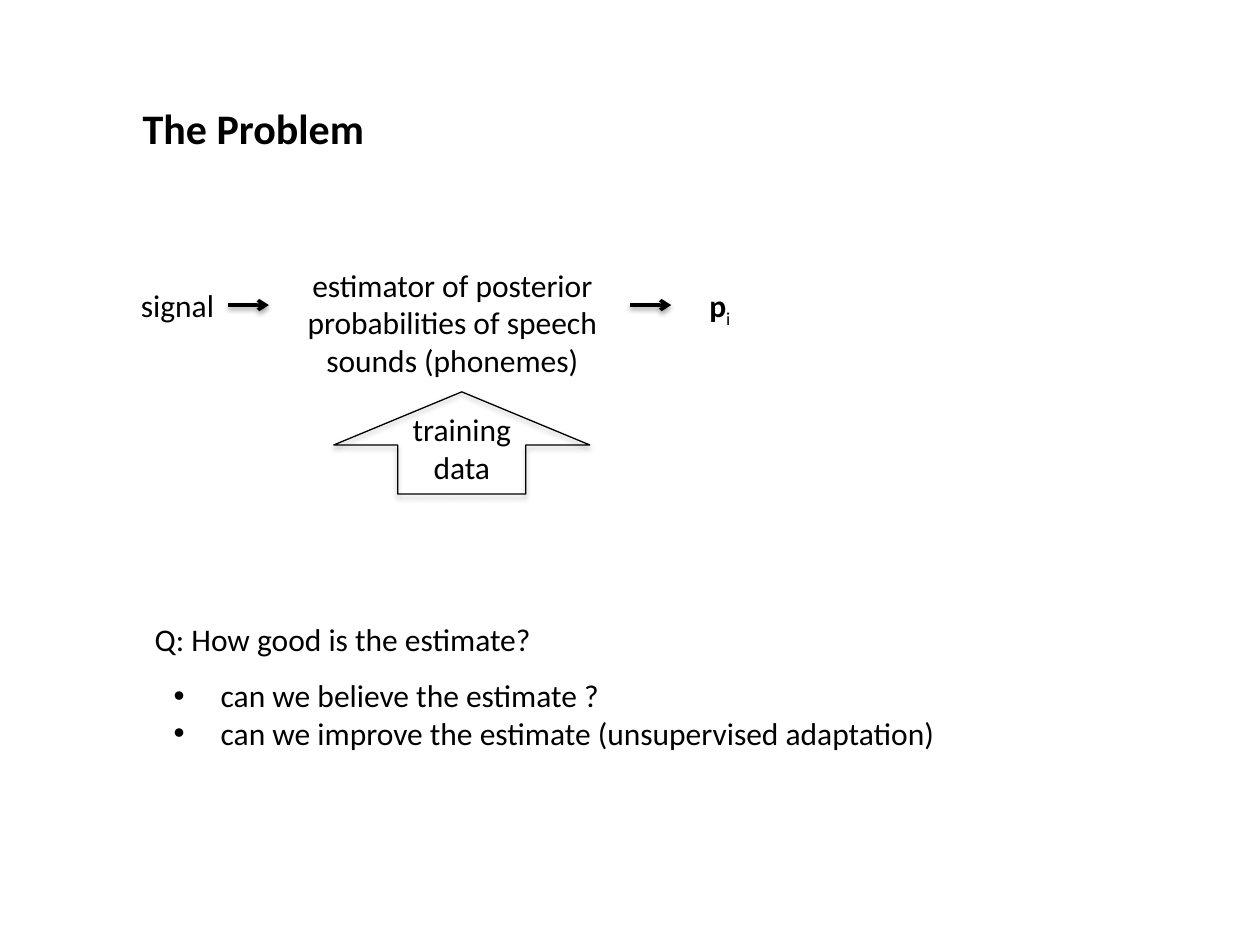
from dataclasses import dataclass

from lxml.etree import SubElement
from pptx import Presentation
from pptx.dml.color import RGBColor
from pptx.enum.shapes import MSO_CONNECTOR as Connector, MSO_SHAPE as Shape
from pptx.enum.text import MSO_ANCHOR as Anchor, MSO_AUTO_SIZE as AutoSize, PP_ALIGN as Align
from pptx.oxml.ns import qn
from pptx.util import Cm, Pt


@dataclass(frozen=True)
class Theme:
    """Colours, font and sizes of the slide."""
    ink: RGBColor = RGBColor(0, 0, 0)
    font: str = "Calibri"
    title: Pt = Pt(24)
    body: Pt = Pt(18)
    flow_line: Pt = Pt(2)
    outline: Pt = Pt(0.75)


THEME = Theme()


def style_font(font, size=THEME.body, bold=False):
    """Apply the theme font."""
    font.name, font.size, font.bold = THEME.font, size, bold
    font.color.rgb = THEME.ink


def add_text(slide, left, top, width, height, lines, align=Align.LEFT, wrap=True):
    """Add a text box with one paragraph per line."""
    box = slide.shapes.add_textbox(Cm(left), Cm(top), Cm(width), Cm(height))
    frame = box.text_frame
    frame.text = "\n".join(lines)
    frame.word_wrap = wrap
    frame.auto_size = AutoSize.SHAPE_TO_FIT_TEXT
    for paragraph in frame.paragraphs:
        paragraph.alignment = align
        style_font(paragraph.font)
    return box


def add_shadow(shape, distance, opacity):
    """Give a shape a soft shadow that falls downwards."""
    properties = shape.element.spPr
    effects = properties.find(qn("a:effectLst"))
    if effects is None:
        effects = SubElement(properties, qn("a:effectLst"))
    shadow = SubElement(effects, qn("a:outerShdw"), blurRad=str(Pt(3.1)),
                        dist=str(Pt(distance)), dir="5400000", rotWithShape="0")
    color = SubElement(shadow, qn("a:srgbClr"), val=str(THEME.ink))
    SubElement(color, qn("a:alpha"), val=str(opacity * 1000))


def add_arrow(slide, left, top, length):
    """Add a horizontal arrow pointing right."""
    arrow = slide.shapes.add_connector(
        Connector.STRAIGHT, Cm(left), Cm(top), Cm(left + length), Cm(top))
    arrow.line.color.rgb = THEME.ink
    arrow.line.width = THEME.flow_line
    SubElement(arrow.element.spPr.find(qn("a:ln")), qn("a:tailEnd"), type="arrow")
    add_shadow(arrow, 1.6, 38)
    return arrow


def add_bullet(paragraph):
    """Turn a paragraph into a bullet with a hanging indent."""
    properties = paragraph._p.get_or_add_pPr()
    properties.set("marL", str(Cm(0.95)))
    properties.set("indent", str(-Cm(0.95)))
    SubElement(properties, qn("a:buFont"), typeface="Arial")
    SubElement(properties, qn("a:buChar"), char="•")
    style_font(paragraph.font)


def place_title(slide, left, top, width, height):
    """Place and format the slide title."""
    title = slide.shapes.title
    title.left, title.top, title.width, title.height = map(Cm, (left, top, width, height))
    frame = title.text_frame
    frame.text = "The Problem"
    frame.word_wrap = True
    frame.auto_size = AutoSize.SHAPE_TO_FIT_TEXT
    frame.vertical_anchor = Anchor.TOP
    frame.paragraphs[0].alignment = Align.LEFT
    style_font(frame.paragraphs[0].font, THEME.title, True)


def place_flow(slide, left, top):
    """Place the chain from signal to probability."""
    label_height = 1.02
    axis = top + 0.92
    label_top = axis - label_height / 2
    signal = add_text(slide, left, label_top, 2, label_height, ["signal"], wrap=False)
    add_text(slide, left + 3.23, top, 6.6, 2.57,
             ["estimator of posterior probabilities of speech sounds (phonemes)"], Align.CENTER)
    add_arrow(slide, left + 2, axis, 0.83).begin_connect(signal, 3)
    add_arrow(slide, left + 10.11, axis, 0.83)
    result = add_text(slide, left + 11.46, label_top, 0.97, label_height, ["p"], wrap=False)
    paragraph = result.text_frame.paragraphs[0]
    style_font(paragraph.runs[0].font, bold=True)
    index = paragraph.add_run()
    index.text = "i"
    style_font(index.font)
    index.font._element.set("baseline", "-25000")


def place_training(slide, left, top, width, height):
    """Place the block arrow for the training data."""
    label_width = 2.64
    add_text(slide, left + (width - label_width) / 2, top + 0.25, label_width, 1.8,
             ["training data"], Align.CENTER)
    arrow = slide.shapes.add_shape(Shape.UP_ARROW, Cm(left), Cm(top), Cm(width), Cm(height))
    arrow.adjustments[0], arrow.adjustments[1] = 0.5, 0.52
    arrow.fill.background()
    arrow.line.color.rgb = THEME.ink
    arrow.line.width = THEME.outline
    arrow.shadow.inherit = False
    add_shadow(arrow, 1.8, 35)


def place_questions(slide, left, top):
    """Place the question and its bullets."""
    add_text(slide, left, top, 10.64, 1.02, ["Q: How good is the estimate?"])
    bullets = add_text(slide, left + 0.38, top + 1.14, 16, 1.8,
                       ["can we believe the estimate ?",
                        "can we improve the estimate (unsupervised adaptation)"], wrap=False)
    for paragraph in bullets.text_frame.paragraphs:
        add_bullet(paragraph)


def main():
    """Build and save the presentation."""
    presentation = Presentation()
    presentation.slide_width, presentation.slide_height = Cm(25.4), Cm(19.05)
    slide = presentation.slides.add_slide(presentation.slide_layouts[5])
    place_title(slide, 2.62, 1.93, 5.44, 1.27)
    place_flow(slide, 2.59, 5.23)
    place_training(slide, 6.73, 7.9, 5.16, 2.06)
    place_questions(slide, 2.87, 12.37)
    presentation.save("out.pptx")


if __name__ == "__main__":
    main()
